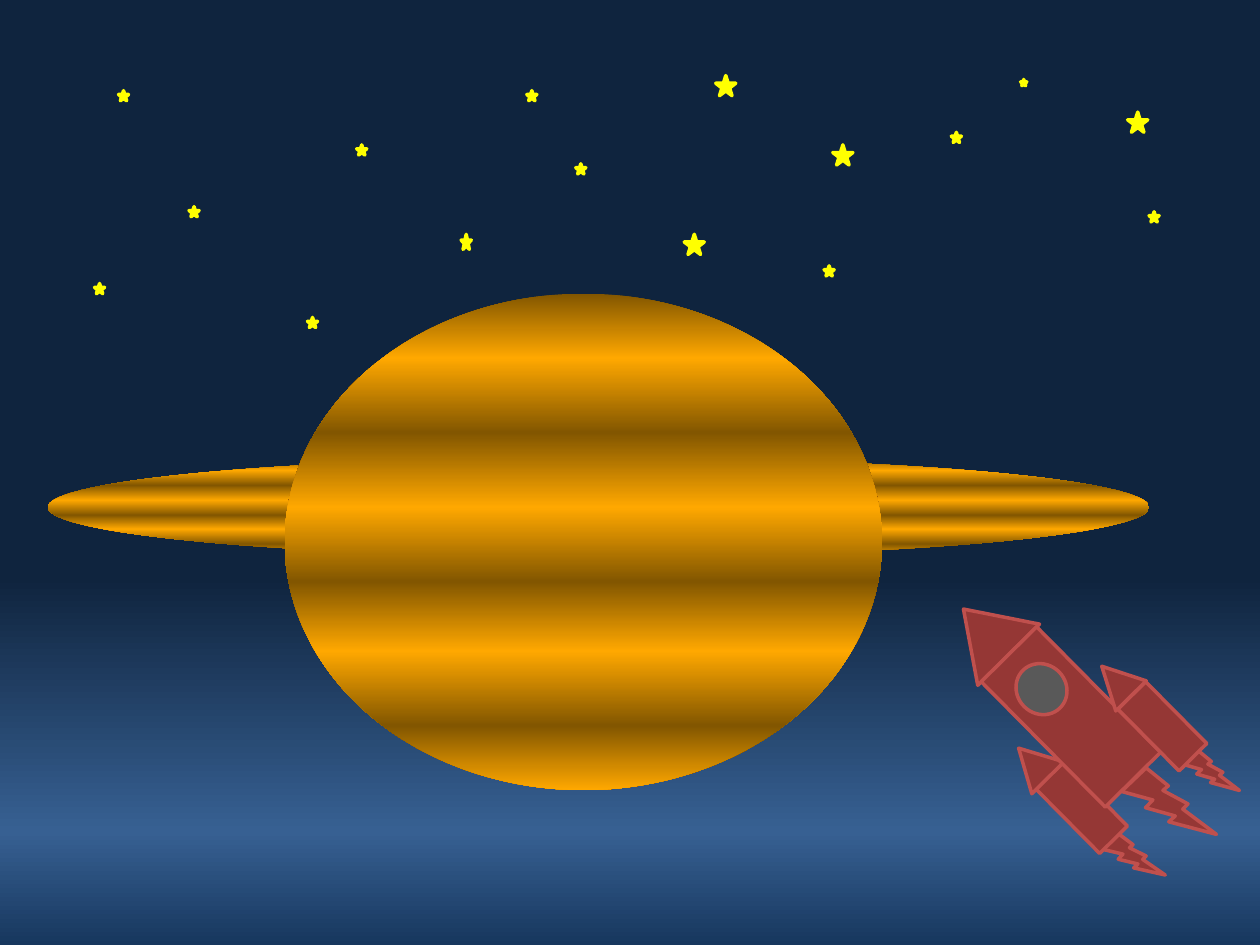
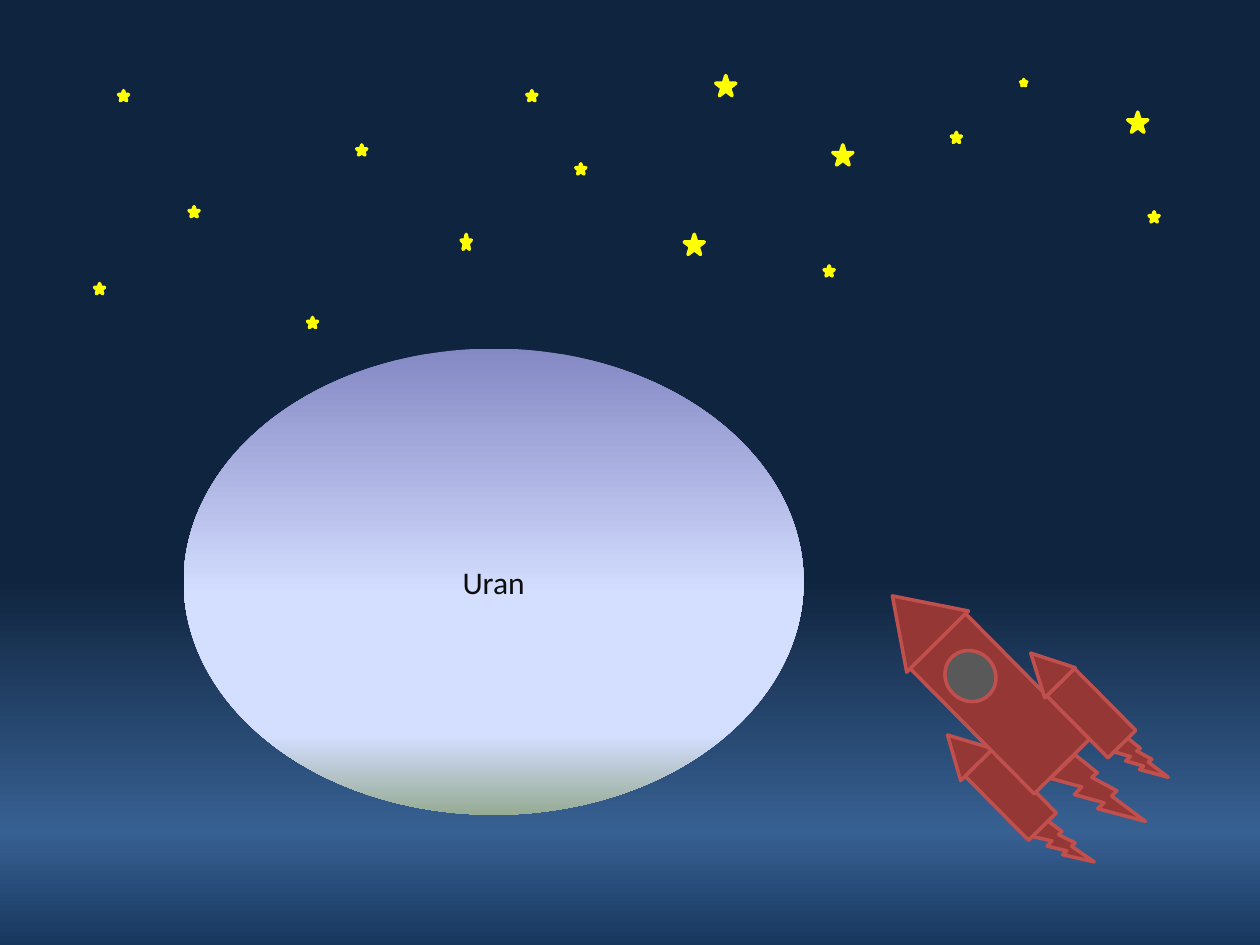
from lxml.etree import SubElement
from pptx import Presentation
from pptx.dml.color import RGBColor
from pptx.enum.shapes import MSO_SHAPE
from pptx.enum.text import MSO_ANCHOR, PP_ALIGN
from pptx.oxml.ns import qn
from pptx.util import Pt

COLORS = {
    "night": "0F243E", "horizon": "376092", "ground": "17375E",
    "star": "FFFF00", "bronze": "825600", "gold": "FFA800",
    "lilac": "8488C4", "ice": "D4DEFF", "moss": "96AB94",
    "hull": "953735", "trim": "C0504D", "window": "595959", "text": "0D0D0D",
}
FONT = "Calibri"

# Gradient stops: position in percent, colour name
SKY = [(0, "night"), (34, "night"), (61, "night"), (88, "horizon"), (100, "ground")]
GOLD_BANDS = [(pos, ("bronze", "gold")[i % 2])
              for i, pos in enumerate((0, 13, 28, 43, 58, 72, 87, 100))]
ICE_HAZE = [(0, "lilac"), (53, "ice"), (83, "ice"), (100, "moss")]

# Left and top of the stars, by star size (width, height)
STARS = {
    (5.8, 5.8): [(54, 162), (108, 118.1), (203.8, 82.8), (175.7, 181.4),
                 (543.6, 75.6), (67.7, 51.8), (329, 93.6), (470.9, 151.9),
                 (301, 51.8), (656.6, 121)],
    (5.8, 8.6): [(263.5, 133.9)],
    (3.6, 3.6): [(583.2, 45.4)],
    (11.5, 11.5): [(475.9, 82.8), (409, 43.2), (644.4, 64.1), (391, 133.9)],
}

# Rocket parts from back to front: shape, box relative to the nose, rotation, fill
TILT = 315.3
BOLT, RECT, CONE = MSO_SHAPE.LIGHTNING_BOLT, MSO_SHAPE.RECTANGLE, MSO_SHAPE.ISOSCELES_TRIANGLE
ROCKET = [
    (BOLT, (93.6, 131.8, 29.5, 31), 341.5, "hull"),
    (RECT, (68.4, 92.9, 22.3, 51.8), TILT, "hull"),
    (CONE, (38.9, 81.4, 25.9, 23.8), TILT, "hull"),
    (CONE, (0, 0, 49.7, 36.7), TILT, "hull"),
    (BOLT, (139, 85, 27.4, 28.1), 344.7, "hull"),
    (BOLT, (105.8, 93.6, 44.6, 48.2), 342.8, "hull"),
    (RECT, (51.1, 16.6, 44.6, 100.8), TILT, "hull"),
    (RECT, (114.5, 47.5, 22.3, 49.7), TILT, "hull"),
    (CONE, (87.1, 34.6, 24.5, 23.8), TILT, "hull"),
    (MSO_SHAPE.OVAL, (42.5, 36, 28.1, 30.2), TILT, "window"),
]


def rgb(name):
    return RGBColor.from_string(COLORS[name])


def set_gradient(fill, element, stops):
    """Fill from top to bottom; element is the XML that holds the fill."""
    fill.gradient()
    fill.gradient_angle = 270
    gs_list = element.xpath(".//a:gsLst")[0]
    for gs in list(gs_list):
        gs_list.remove(gs)
    for pos, name in stops:
        gs = SubElement(gs_list, qn("a:gs"), pos=str(pos * 1000))
        SubElement(gs, qn("a:srgbClr"), val=COLORS[name])


def add_shape(shapes, kind, box):
    sp = shapes.add_shape(kind, *(Pt(v) for v in box))
    sp.shadow.inherit = False
    return sp


def add_outlined(shapes, kind, box, fill, line, rotation=0):
    sp = add_shape(shapes, kind, box)
    sp.fill.solid()
    sp.fill.fore_color.rgb = rgb(fill)
    sp.line.color.rgb = rgb(line)
    sp.line.width = Pt(2)
    sp.rotation = rotation


def add_planet(shapes, box, stops):
    sp = add_shape(shapes, MSO_SHAPE.OVAL, box)
    set_gradient(sp.fill, sp.element, stops)
    sp.line.fill.background()
    return sp


def add_label(sp, text):
    tf = sp.text_frame
    tf.text = text
    tf.vertical_anchor = MSO_ANCHOR.MIDDLE
    p = tf.paragraphs[0]
    p.alignment = PP_ALIGN.CENTER
    font = p.runs[0].font
    font.name, font.size = FONT, Pt(18)
    font.color.rgb = rgb("text")


def add_rocket(slide, left, top):
    group = slide.shapes.add_group_shape()
    for kind, (x, y, w, h), rotation, fill in ROCKET:
        add_outlined(group.shapes, kind, (left + x, top + y, w, h), fill, "trim", rotation)


def add_night_slide(prs):
    slide = prs.slides.add_slide(prs.slide_layouts[6])
    set_gradient(slide.background.fill, slide.element, SKY)
    group = slide.shapes.add_group_shape()
    for size, places in STARS.items():
        for place in places:
            add_outlined(group.shapes, MSO_SHAPE.STAR_5_POINT, place + size, "star", "star")
    return slide


def add_ringed_planet_slide(prs):
    slide = add_night_slide(prs)
    group = slide.shapes.add_group_shape()
    ring, globe = (27.4, 261.4, 629.3, 56.9), (162.7, 167.8, 341.3, 283.7)
    for box in (ring, globe):
        add_planet(group.shapes, box, GOLD_BANDS)
    add_rocket(slide, 538.6, 342.7)


def add_uranus_slide(prs):
    slide = add_night_slide(prs)
    planet = add_planet(slide.shapes, (105, 199.2, 354.2, 266.4), ICE_HAZE)
    add_label(planet, "Uran")
    add_rocket(slide, 498, 335.2)


def main():
    prs = Presentation()
    prs.slide_width, prs.slide_height = Pt(720), Pt(540)
    add_ringed_planet_slide(prs)
    add_uranus_slide(prs)
    prs.save("out.pptx")


if __name__ == "__main__":
    main()
